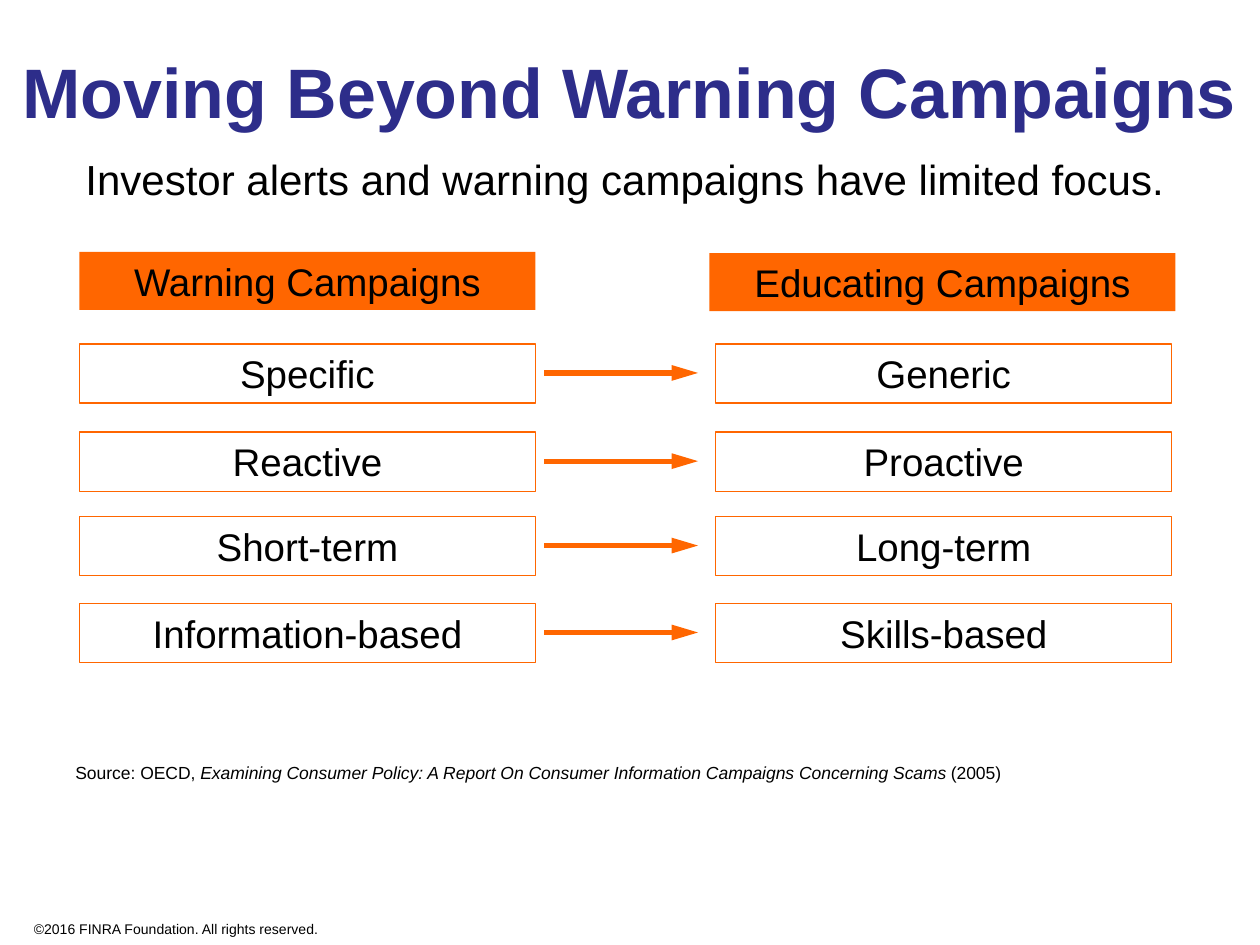
from lxml import etree
from pptx import Presentation
from pptx.dml.color import RGBColor
from pptx.enum.shapes import MSO_CONNECTOR, MSO_SHAPE
from pptx.enum.text import MSO_ANCHOR, PP_ALIGN
from pptx.oxml.ns import qn
from pptx.util import Inches, Pt

RECT = MSO_SHAPE.RECTANGLE
LINE = MSO_CONNECTOR.STRAIGHT
LEFT, MID = PP_ALIGN.LEFT, PP_ALIGN.CENTER
TOP, CENTER = MSO_ANCHOR.TOP, MSO_ANCHOR.MIDDLE

ORANGE = RGBColor(0xFF, 0x66, 0x00)
NAVY = RGBColor(0x2D, 0x2D, 0x8A)
BLACK = RGBColor(0, 0, 0)
WHITE = RGBColor(0xFF, 0xFF, 0xFF)

WARN_X, EDU_X = 0.63, 5.68
BOX_W, BOX_H = 3.62, 0.47
ROWS = [
    (2.73, "Specific", "Generic"),
    (3.43, "Reactive", "Proactive"),
    (4.1, "Short-term", "Long-term"),
    (4.79, "Information-based", "Skills-based"),
]


class Deck:
    font = "Arial"

    def __init__(self, slide):
        self.slide = slide

    def fill_text(self, shape, runs, size, align=LEFT, anchor=TOP, wrap=True,
                  color=BLACK, **form):
        """Fill a shape with one paragraph of (text, format) runs."""
        frame = shape.text_frame
        frame.word_wrap = wrap
        frame.vertical_anchor = anchor
        para = frame.paragraphs[0]
        para.alignment = align
        base = {"name": self.font, "size": Pt(size), **form}
        for text, extra in runs:
            run = para.add_run()
            run.text = text
            run.font.color.rgb = color
            for key, value in {**base, **extra}.items():
                setattr(run.font, key, value)

    def text(self, place, runs, size, **form):
        shape = self.slide.shapes.add_textbox(*map(Inches, place))
        self.fill_text(shape, runs, size, **form)

    def box(self, place, text, fill=WHITE, line=None):
        shape = self.slide.shapes.add_shape(RECT, *map(Inches, place))
        shape.shadow.inherit = False
        shape.fill.solid()
        shape.fill.fore_color.rgb = fill
        if line is None:
            shape.line.fill.background()
        else:
            shape.line.color.rgb = line
            shape.line.width = Pt(0.75)
        self.fill_text(shape, [(text, {})], 22, align=MID)

    def arrow(self, start, end, y):
        arrow = self.slide.shapes.add_connector(LINE, *map(Inches, (start, y, end, y)))
        arrow.line.color.rgb = ORANGE
        arrow.line.width = Pt(3)
        props = arrow._element.spPr
        etree.SubElement(props.find(qn("a:ln")), qn("a:tailEnd"),
                         type="triangle", w="med", len="lg")
        etree.SubElement(props, qn("a:effectLst"))


def main():
    show = Presentation()
    show.slide_width, show.slide_height = Inches(10), Inches(7.5)
    deck = Deck(show.slides.add_slide(show.slide_layouts[6]))

    deck.text((0.17, 7.26, 2.83, 0.24),
              [("©2016 FINRA Foundation. All rights reserved.", {})], 8)
    deck.text((0, 0.33, 9.99, 0.78), [("Moving Beyond Warning Campaigns", {})], 40,
              align=MID, anchor=CENTER, color=NAVY, bold=True)
    deck.text((0.58, 1.17, 8.77, 0.5),
              [("Investor alerts and warning campaigns have limited focus.", {})], 24,
              wrap=False)

    deck.box((WARN_X, 2, BOX_W, 0.46), "Warning Campaigns", ORANGE)
    deck.box((5.63, 2.01, 3.7, 0.46), "Educating Campaigns", ORANGE)
    for top, warn, teach in ROWS:
        deck.box((WARN_X, top, BOX_W, BOX_H), warn, line=ORANGE)
        deck.box((EDU_X, top, BOX_W, BOX_H), teach, line=ORANGE)
        deck.arrow(4.32, 5.54, top + 0.23)

    title = ("Examining Consumer Policy: A Report On Consumer Information "
             "Campaigns Concerning Scams ")
    deck.text((0.5, 6, 8.87, 0.26),
              [("Source: OECD, ", {}), (title, {"italic": True}), ("(2005)", {})], 10)
    show.save("out.pptx")


if __name__ == "__main__":
    main()
